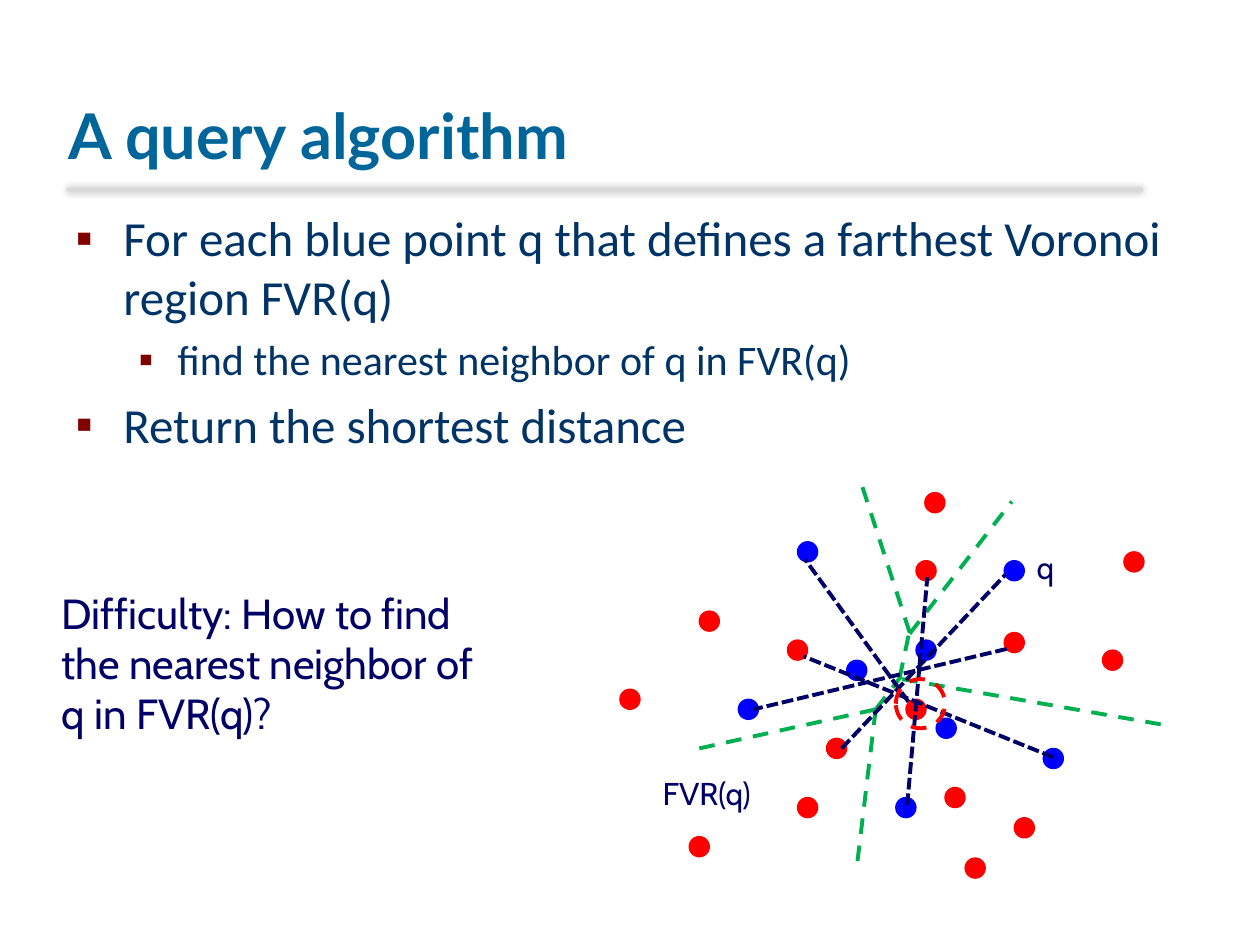
from dataclasses import dataclass

from lxml import etree
from pptx import Presentation
from pptx.dml.color import RGBColor
from pptx.enum.dml import MSO_LINE_DASH_STYLE as Dash
from pptx.enum.shapes import MSO_CONNECTOR_TYPE as Connector, MSO_SHAPE as Shape
from pptx.enum.text import MSO_ANCHOR as Anchor, MSO_AUTO_SIZE as AutoSize, PP_ALIGN as Align
from pptx.oxml import parse_xml
from pptx.oxml.ns import nsdecls, qn
from pptx.util import Inches, Pt


@dataclass(frozen=True)
class Theme:
    title: str = "006699"
    body: str = "003366"
    bullet: str = "800000"
    note: str = "000066"
    blue: str = "0000FF"
    red: str = "FF0000"
    green: str = "00B050"
    rule: str = "D9D9D9"
    title_size: int = 36
    body_size: int = 28
    sub_size: int = 24
    label_size: int = 18
    dot: float = 0.16
    thick: float = 2.25


THEME = Theme()

BULLETS = [
    (0, "For each blue point q that defines a farthest Voronoi region FVR(q)"),
    (1, "find the nearest neighbor of q in FVR(q)"),
    (0, "Return the shortest distance"),
]
# Top left corners of the dots
BLUE_POINTS = [
    (7.27, 5.08), (6.33, 4.3), (7.43, 5.7), (6.72, 5.24), (5.86, 5.55),
    (7.97, 4.45), (7.11, 6.33), (8.28, 5.94),
]
RED_POINTS = [
    (6.33, 6.33), (8.05, 6.49), (7.5, 6.25), (6.56, 5.86), (6.25, 5.08),
    (5.55, 4.85), (7.97, 5.02), (7.27, 4.45), (7.34, 3.91), (4.92, 5.47),
    (5.47, 6.64), (7.66, 6.81), (8.75, 5.16), (8.92, 4.38), (7.19, 5.55),
]
# Lines as x1, y1, x2, y2
VORONOI_EDGES = [
    (5.55, 5.94, 6.95, 5.63), (6.95, 5.63, 6.8, 6.88), (6.95, 5.63, 7.15, 5.37),
    (7.14, 5.38, 7.22, 5), (7.16, 5.39, 9.22, 5.75), (7.22, 5.02, 6.83, 3.82),
    (7.22, 5.03, 8.03, 3.98),
]
NEIGHBOR_LINES = [
    (6.68, 5.94, 7.98, 4.56), (7.21, 5.57, 6.39, 4.44), (7.99, 5.15, 5.98, 5.63),
    (8.36, 6.01, 6.38, 5.21), (7.2, 6.39, 7.36, 4.58),
]


def color(value):
    return RGBColor.from_string(value)


def place(shape, left, top, width, height):
    shape.left, shape.top = Inches(left), Inches(top)
    shape.width, shape.height = Inches(width), Inches(height)


def style_text(para, font, size, tint, bold=False):
    for span in para.runs:
        span.font.name = font
        span.font.size = Pt(size)
        span.font.bold = bold
        span.font.color.rgb = color(tint)


def set_bullet(para, indent, hanging):
    properties = para._p.get_or_add_pPr()
    properties.set("marL", str(Inches(indent)))
    properties.set("indent", str(-Inches(hanging)))
    bullet_color = etree.SubElement(properties, qn("a:buClr"))
    etree.SubElement(bullet_color, qn("a:srgbClr"), val=THEME.bullet)
    etree.SubElement(properties, qn("a:buFont"), typeface="Arial")
    etree.SubElement(properties, qn("a:buChar"), char="▪")


def add_title(page):
    title = page.shapes.title
    place(title, 0.44, 0.17, 8.5, 1.25)
    frame = title.text_frame
    frame.text = "A query algorithm"
    frame.vertical_anchor = Anchor.BOTTOM
    frame.auto_size = AutoSize.NONE
    para = frame.paragraphs[0]
    para.alignment = Align.LEFT
    style_text(para, "Lato", THEME.title_size, THEME.title, bold=True)


def add_title_rule(page):
    """Draw the soft grey rule under the title."""
    rule = page.shapes.add_shape(
        Shape.RECTANGLE, Inches(0.53), Inches(1.49), Inches(8.54), Inches(0.03))
    rule.fill.solid()
    rule.fill.fore_color.rgb = color(THEME.rule)
    rule.line.fill.background()
    rule._element.spPr.append(parse_xml(
        f'<a:effectLst {nsdecls("a")}><a:outerShdw blurRad="{Pt(4)}" dist="0">'
        '<a:srgbClr val="000000"><a:alpha val="40000"/></a:srgbClr>'
        '</a:outerShdw></a:effectLst>'))


def add_bullets(page):
    body = page.placeholders[1]
    place(body, 0.5, 1.6, 8.95, 2.15)
    frame = body.text_frame
    frame.text = "\n".join(text for _, text in BULLETS)
    frame.auto_size = AutoSize.NONE
    levels = [(THEME.body_size, 0.38, 0.38), (THEME.sub_size, 0.81, 0.31)]
    for para, (level, _) in zip(frame.paragraphs, BULLETS):
        size, indent, hanging = levels[level]
        para.level = level
        set_bullet(para, indent, hanging)
        style_text(para, "Calibri", size, THEME.body)


def add_note(page, text, left, top, width, height, size, wrap=False):
    box = page.shapes.add_textbox(
        Inches(left), Inches(top), Inches(width), Inches(height))
    frame = box.text_frame
    frame.text = text
    frame.word_wrap = wrap
    style_text(frame.paragraphs[0], "Cabin", size, THEME.note)


def add_circle(page, left, top, size):
    circle = page.shapes.add_shape(
        Shape.OVAL, Inches(left), Inches(top), Inches(size), Inches(size))
    circle.shadow.inherit = False
    return circle


def add_dots(page, points, tint):
    for left, top in points:
        dot = add_circle(page, left, top, THEME.dot)
        dot.fill.solid()
        dot.fill.fore_color.rgb = color(tint)
        dot.line.color.rgb = color(tint)
        dot.line.width = Pt(0.75)


def set_dashes(line, tint, dash):
    line.color.rgb = color(tint)
    line.width = Pt(THEME.thick)
    line.dash_style = dash


def add_lines(page, segments, tint, dash):
    for segment in segments:
        line = page.shapes.add_connector(Connector.STRAIGHT, *map(Inches, segment))
        set_dashes(line.line, tint, dash)
        etree.SubElement(line._element.spPr, qn("a:effectLst"))


def add_nearest_ring(page):
    ring = add_circle(page, 7.11, 5.39, 0.39)
    ring.fill.background()
    set_dashes(ring.line, THEME.red, Dash.DASH)


def main():
    deck = Presentation()
    deck.slide_width, deck.slide_height = Inches(10), Inches(7.5)
    page = deck.slides.add_slide(deck.slide_layouts[1])
    add_title_rule(page)
    add_title(page)
    add_bullets(page)
    add_dots(page, BLUE_POINTS, THEME.blue)
    add_lines(page, VORONOI_EDGES, THEME.green, Dash.DASH)
    add_dots(page, RED_POINTS, THEME.red)
    add_lines(page, NEIGHBOR_LINES, THEME.note, Dash.SQUARE_DOT)
    add_nearest_ring(page)
    add_note(page, "FVR(q)", 5.16, 6.09, 0.92, 0.4, THEME.label_size)
    add_note(page, "q", 8.13, 4.3, 0.33, 0.4, THEME.label_size)
    add_note(page, "Difficulty: How to find the nearest neighbor of q in FVR(q)?",
             0.39, 4.61, 3.59, 1.31, THEME.sub_size, wrap=True)
    deck.save("out.pptx")


if __name__ == "__main__":
    main()
